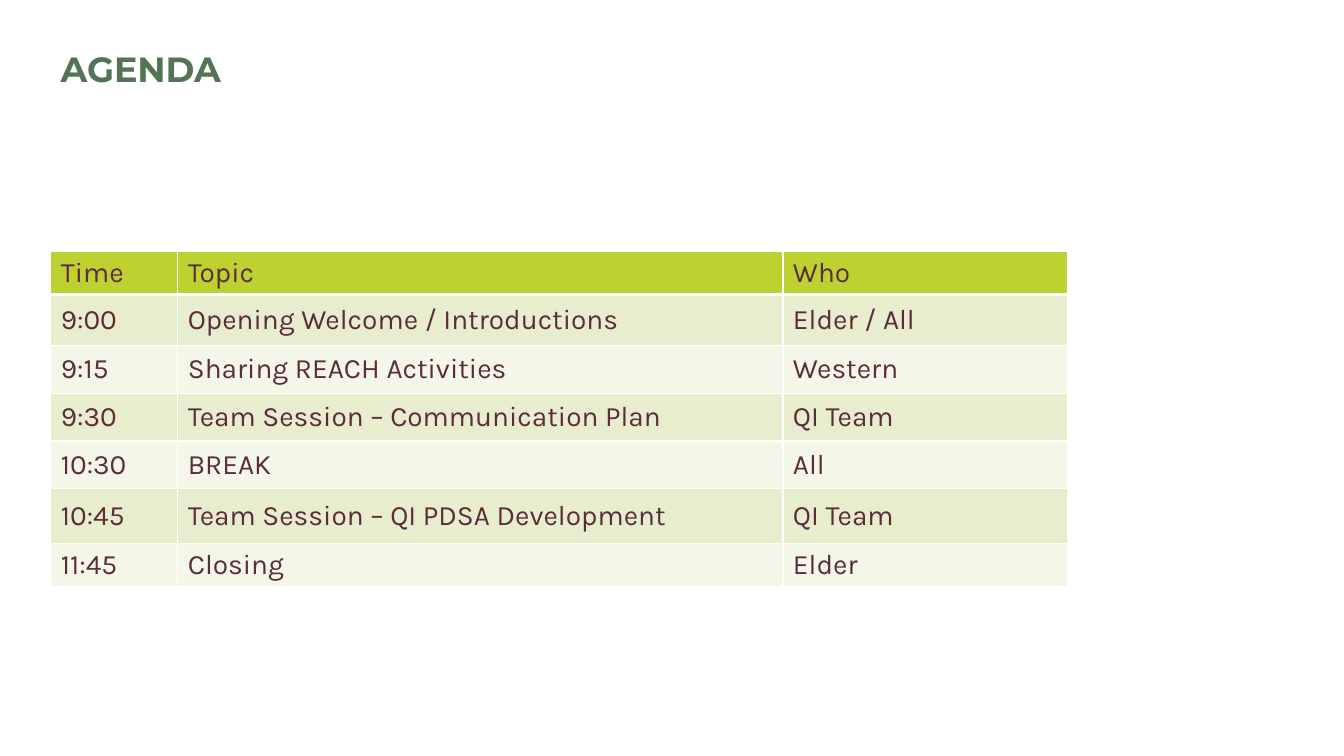
from dataclasses import dataclass

from lxml import etree
from pptx import Presentation
from pptx.dml.color import RGBColor
from pptx.enum import text
from pptx.oxml import ns
from pptx.util import Cm, Pt

TITLE = "AGENDA"
AGENDA = [
    ("Time", "Topic", "Who"),
    ("9:00", "Opening Welcome / Introductions", "Elder / All"),
    ("9:15", "Sharing REACH Activities", "Western"),
    ("9:30", "Team Session – Communication Plan", "QI Team"),
    ("10:30", "BREAK", "All"),
    ("10:45", "Team Session – QI PDSA Development", "QI Team"),
    ("11:45", "Closing", "Elder"),
]
COLUMN_WIDTHS = (3.2, 15.25, 7.18)
ROW_HEIGHTS = (1.06, 1.29, 1.2, 1.2, 1.2, 1.39, 1.08)
LEFT = 1.28
TITLE_TOP, TITLE_WIDTH, TITLE_HEIGHT = 1.07, 25.2, 1.27
TABLE_TOP = 6.34


@dataclass(frozen=True)
class Theme:
    title_font: str = "Montserrat"
    title_size: int = 25
    title_color: str = "547555"
    table_font: str = "Karla"
    table_size: int = 20
    table_color: str = "5B2C3C"
    header_fill: str = "BDD230"
    band_fills: tuple = ("E8EECD", "F4F7E8")
    border_color: str = "FFFFFF"
    thin_border: int = 1
    header_border: int = 3


THEME = Theme()


def add_run(paragraph, words, font_name, size, color, bold=False):
    run = paragraph.add_run()
    run.text = words
    run.font.name = font_name
    run.font.size = Pt(size)
    run.font.bold = bold
    run.font.color.rgb = RGBColor.from_string(color)


def set_borders(cell, top, bottom):
    """Draw all four cell edges; must run before the cell fill is set."""
    properties = cell._tc.get_or_add_tcPr()
    thin = THEME.thin_border
    for edge, width in (("L", thin), ("R", thin), ("T", top), ("B", bottom)):
        line = etree.SubElement(properties, ns.qn(f"a:ln{edge}"), w=str(Pt(width)))
        fill = etree.SubElement(line, ns.qn("a:solidFill"))
        etree.SubElement(fill, ns.qn("a:srgbClr"), val=THEME.border_color)


def add_title(slide):
    box = slide.shapes.add_textbox(
        Cm(LEFT), Cm(TITLE_TOP), Cm(TITLE_WIDTH), Cm(TITLE_HEIGHT))
    box.text_frame.word_wrap = True
    add_run(box.text_frame.paragraphs[0], TITLE, THEME.title_font,
            THEME.title_size, THEME.title_color, bold=True)


def add_agenda(slide):
    table = slide.shapes.add_table(
        len(AGENDA), len(COLUMN_WIDTHS), Cm(LEFT), Cm(TABLE_TOP),
        Cm(sum(COLUMN_WIDTHS)), Cm(sum(ROW_HEIGHTS))).table
    for column, width in zip(table.columns, COLUMN_WIDTHS):
        column.width = Cm(width)
    for row, height in zip(table.rows, ROW_HEIGHTS):
        row.height = Cm(height)

    for row_index, entries in enumerate(AGENDA):
        is_header = row_index == 0
        fill = THEME.header_fill if is_header else THEME.band_fills[(row_index - 1) % 2]
        top = THEME.header_border if row_index == 1 else THEME.thin_border
        bottom = THEME.header_border if is_header else THEME.thin_border
        for column_index, words in enumerate(entries):
            cell = table.cell(row_index, column_index)
            set_borders(cell, top, bottom)
            cell.fill.solid()
            cell.fill.fore_color.rgb = RGBColor.from_string(fill)
            cell.vertical_anchor = text.MSO_ANCHOR.MIDDLE
            add_run(cell.text_frame.paragraphs[0], words, THEME.table_font,
                    THEME.table_size, THEME.table_color)


def main():
    presentation = Presentation()
    presentation.slide_width, presentation.slide_height = Cm(33.87), Cm(19.05)
    slide = presentation.slides.add_slide(presentation.slide_layouts[6])
    add_agenda(slide)
    add_title(slide)
    presentation.save("out.pptx")


if __name__ == "__main__":
    main()
